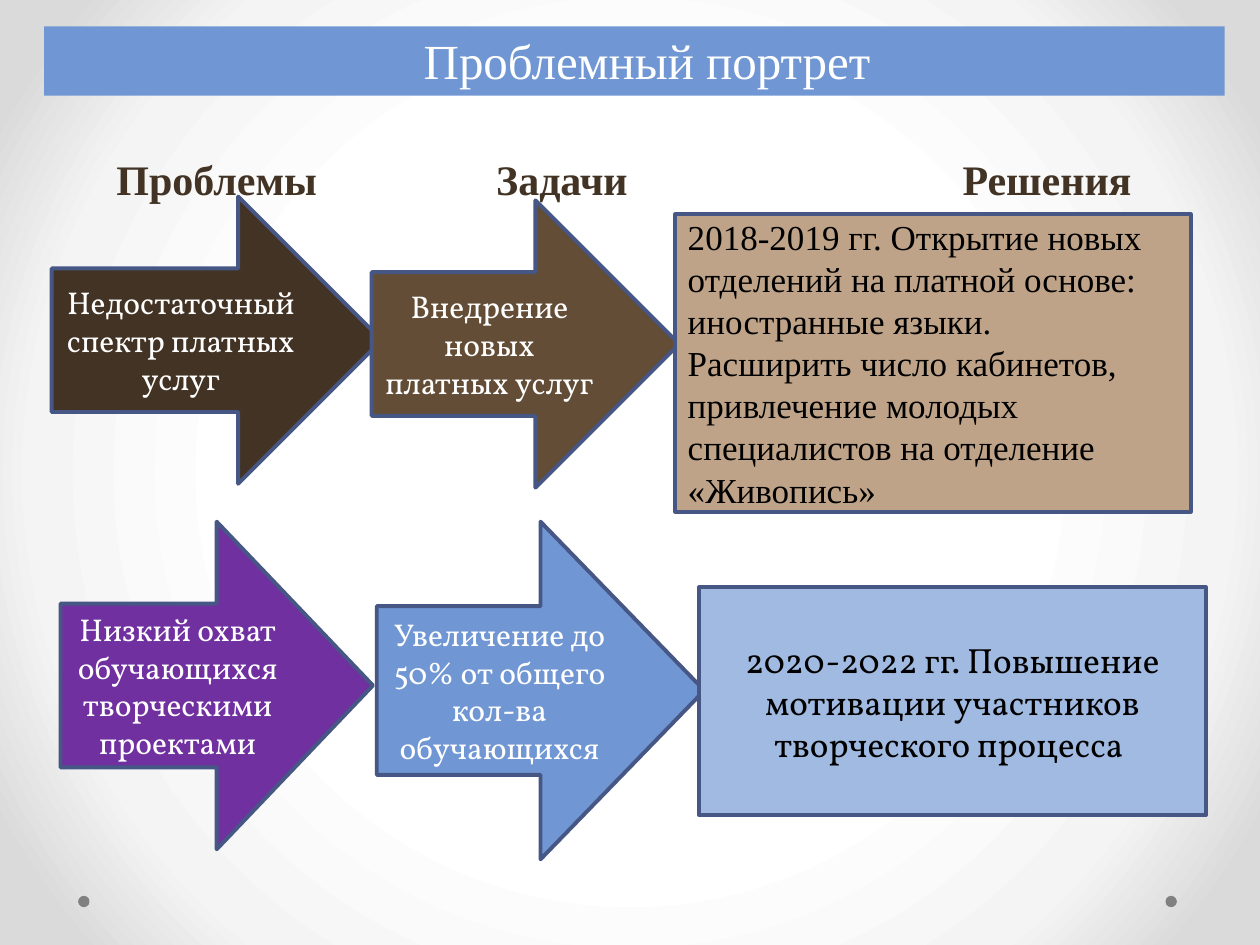
from lxml.etree import SubElement
from pptx import Presentation
from pptx.dml.color import RGBColor
from pptx.enum.shapes import MSO_SHAPE
from pptx.enum.text import MSO_ANCHOR, PP_ALIGN
from pptx.oxml.ns import qn
from pptx.util import Inches, Pt

WIDTH, HEIGHT = Inches(10), Inches(7.5)
SERIF, BOOK = "Times New Roman", "Vollkorn"
COLORS = {
    "white": "FFFFFF", "black": "000000", "brown": "423324",
    "mid_brown": "634D36", "tan": "BEA388", "purple": "7030A0",
    "blue": "7097D3", "light_blue": "A0BAE1", "outline": "475785",
    "dot": "808080", "haze": "F4F4F4", "edge": "DADADA",
}


def color(name):
    return RGBColor.from_string(COLORS[name])


def place(left, top, width, height):
    """Turn percentages of the slide's size into lengths."""
    return (int(WIDTH * left / 100), int(HEIGHT * top / 100),
            int(WIDTH * width / 100), int(HEIGHT * height / 100))


def paint_background(slide):
    """Radial gradient, white in the middle and grey at the corners."""
    slide.background.fill.gradient()
    gradient = slide.element.find(".//" + qn("a:gradFill"))
    for child in list(gradient):
        gradient.remove(child)
    stops = SubElement(gradient, qn("a:gsLst"))
    for share, name in ((50, "white"), (76, "haze"), (92, "edge")):
        stop = SubElement(stops, qn("a:gs"), pos=str(share * 1000))
        SubElement(stop, qn("a:srgbClr"), val=COLORS[name])
    circle = SubElement(gradient, qn("a:path"), path="circle")
    SubElement(circle, qn("a:fillToRect"),
               {side: "50000" for side in "ltrb"})


def write(shape, paragraphs, font, size, ink, align=PP_ALIGN.CENTER,
          anchor=MSO_ANCHOR.MIDDLE, bold=False):
    frame = shape.text_frame
    frame.word_wrap = True
    frame.vertical_anchor = anchor
    for index, text in enumerate(paragraphs):
        paragraph = frame.add_paragraph() if index else frame.paragraphs[0]
        paragraph.alignment = align
        run = paragraph.add_run()
        run.text = text
        run.font.name, run.font.size, run.font.bold = font, Pt(size), bold
        run.font.color.rgb = color(ink)


def add_block(slide, kind, area, fill, outlined=True):
    block = slide.shapes.add_shape(kind, *place(*area))
    block.shadow.inherit = False
    block.fill.solid()
    block.fill.fore_color.rgb = color(fill)
    if outlined:
        block.line.color.rgb = color("outline")
        block.line.width = Pt(2.25)
    else:
        block.line.fill.background()
    return block


def add_title(slide, text):
    banner = add_block(slide, MSO_SHAPE.RECTANGLE, (3.5, 2.8, 93.7, 7.33),
                       "blue", outlined=False)
    write(banner, [text], SERIF, 28, "white", anchor=MSO_ANCHOR.BOTTOM)
    indent = banner.text_frame.paragraphs[0]._p.get_or_add_pPr()
    indent.set("marL", str(Inches(0.2)))


def add_heading(slide, text, center, width=24):
    heading = slide.shapes.add_textbox(
        *place(center - width / 2, 15.6, width, 6.4))
    write(heading, [text], SERIF, 24, "brown", anchor=MSO_ANCHOR.TOP, bold=True)


def add_arrow(slide, text, area, fill):
    arrow = add_block(slide, MSO_SHAPE.RIGHT_ARROW, area, fill)
    write(arrow, [text], BOOK, 18, "white")


def add_solution(slide, paragraphs, area, fill, font, align):
    solution = add_block(slide, MSO_SHAPE.RECTANGLE, area, fill)
    write(solution, paragraphs, font, 20, "black", align)


def main():
    deck = Presentation()
    deck.slide_width, deck.slide_height = WIDTH, HEIGHT
    slide = deck.slides.add_slide(deck.slide_layouts[6])
    paint_background(slide)

    # Corner dots
    for left in (92.5, 6.2):
        add_block(slide, MSO_SHAPE.OVAL, (left, 94.8, 0.9, 1.2), "dot",
                  outlined=False)

    # Title and column headings
    add_title(slide, "Проблемный портрет")
    for text, center in (("Проблемы", 17.2), ("Задачи", 44.6),
                         ("Решения", 83.1)):
        add_heading(slide, text, center)

    # First row: paid services
    add_arrow(slide, "Недостаточный спектр платных услуг",
              (4.1, 20.8, 26.2, 30.4), "brown")
    add_arrow(slide, "Внедрение новых платных услуг",
              (29.5, 21.2, 24.4, 30.4), "mid_brown")
    add_solution(slide, [
        "2018-2019 гг. Открытие новых отделений на платной основе: "
        "иностранные языки.",
        "Расширить число кабинетов, привлечение молодых специалистов "
        "на отделение «Живопись»",
    ], (53.6, 22.67, 40.9, 31.47), "tan", SERIF, PP_ALIGN.LEFT)

    # Second row: creative projects
    add_arrow(slide, "Низкий охват обучающихся творческими проектами",
              (4.8, 55.2, 24.8, 34.67), "purple")
    add_arrow(slide, "Увеличение до 50% от общего кол-ва обучающихся",
              (29.9, 55.2, 26, 35.73), "blue")
    add_solution(slide, [
        "2020-2022 гг. Повышение мотивации участников творческого процесса ",
    ], (55.5, 62.13, 40.2, 24.13), "light_blue", BOOK, PP_ALIGN.CENTER)

    deck.save("out.pptx")


if __name__ == "__main__":
    main()
